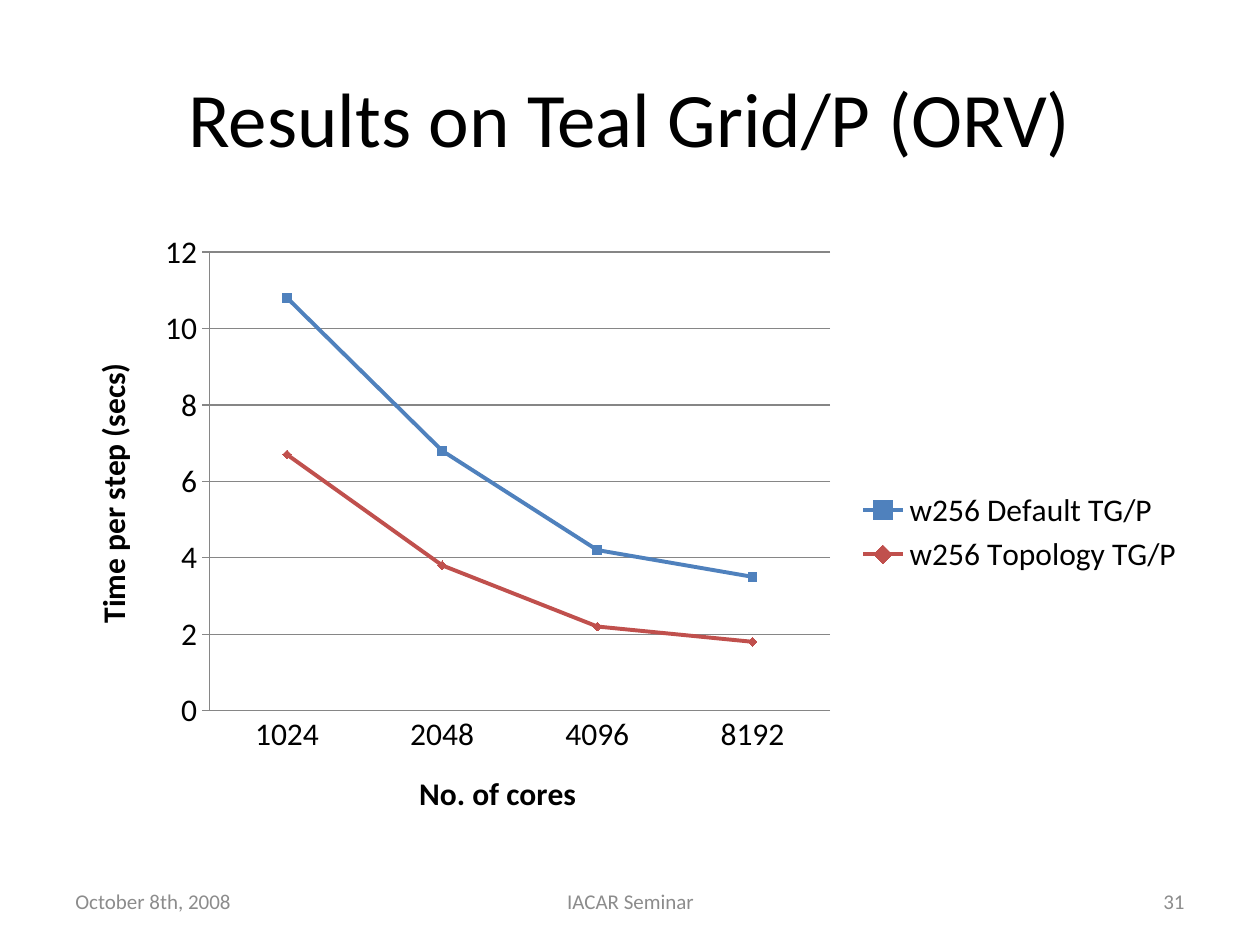
from dataclasses import dataclass

from pptx import Presentation
from pptx import util as u
from pptx.chart import data as chart_data
from pptx.dml import color
from pptx.enum import chart as ch, text


@dataclass(frozen=True)
class Theme:
    font: str = "Calibri"
    ink: str = "000000"
    muted: str = "8C8C8C"
    rule: str = "868686"
    blue: str = "4F81BD"
    red: str = "C0504D"
    title_size: int = 44
    chart_size: int = 18
    footer_size: int = 12


THEME = Theme()
CORES = ["1024", "2048", "4096", "8192"]
TIMINGS = [
    ("w256 Default TG/P", [10.8, 6.8, 4.2, 3.5], THEME.blue, ch.XL_MARKER_STYLE.SQUARE),
    ("w256 Topology TG/P", [6.7, 3.8, 2.2, 1.8], THEME.red, ch.XL_MARKER_STYLE.DIAMOND),
]
FOOTERS = [
    ("October 8th, 2008", 0.5, 2.33, text.PP_ALIGN.LEFT),
    ("IACAR Seminar", 3.42, 3.17, text.PP_ALIGN.CENTER),
    ("31", 7.17, 2.33, text.PP_ALIGN.RIGHT),
]


def rgb(value):
    return color.RGBColor.from_string(value)


def style_font(font, size, ink, bold=False):
    font.name = THEME.font
    font.size = u.Pt(size)
    font.bold = bold
    font.color.rgb = rgb(ink)


def fill_text(holder, wording, size, ink, align):
    frame = holder.text_frame
    frame.text = wording
    frame.word_wrap = True
    frame.vertical_anchor = text.MSO_ANCHOR.MIDDLE
    paragraph = frame.paragraphs[0]
    paragraph.alignment = align
    style_font(paragraph.runs[0].font, size, ink)


def add_title(slide, wording):
    title = slide.shapes.title
    title.left, title.top = u.Inches(0.5), u.Inches(0.3)
    title.width, title.height = u.Inches(9), u.Inches(1.25)
    fill_text(title, wording, THEME.title_size, THEME.ink, text.PP_ALIGN.CENTER)


def add_footer(slide, wording, left, width, align):
    footer = slide.shapes.add_textbox(
        u.Inches(left), u.Inches(6.95), u.Inches(width), u.Inches(0.4))
    fill_text(footer, wording, THEME.footer_size, THEME.muted, align)


def style_axis(axis, wording, tick):
    frame = axis.axis_title.text_frame
    frame.text = wording
    style_font(frame.paragraphs[0].runs[0].font, THEME.chart_size, THEME.ink, bold=True)
    axis.major_tick_mark = tick
    axis.minor_tick_mark = ch.XL_TICK_MARK.NONE
    axis.format.line.color.rgb = rgb(THEME.rule)


def style_series(series, ink, marker):
    series.smooth = False
    series.format.line.color.rgb = rgb(ink)
    series.format.line.width = u.Pt(2.25)
    series.marker.style = marker
    series.marker.size = 5
    series.marker.format.fill.solid()
    series.marker.format.fill.fore_color.rgb = rgb(ink)
    series.marker.format.line.color.rgb = rgb(ink)


def add_timing_chart(slide):
    timings = chart_data.CategoryChartData()
    timings.categories = CORES
    for name, values, _, _ in TIMINGS:
        timings.add_series(name, values)
    chart = slide.shapes.add_chart(
        ch.XL_CHART_TYPE.LINE_MARKERS, u.Inches(0.5), u.Inches(1.75),
        u.Inches(9), u.Inches(4.95), timings).chart

    style_font(chart.font, THEME.chart_size, THEME.ink)
    chart.has_title = False
    chart.has_legend = True
    chart.legend.position = ch.XL_LEGEND_POSITION.RIGHT
    chart.legend.include_in_layout = False
    chart.plots[0].vary_by_categories = False

    style_axis(chart.category_axis, "No. of cores", ch.XL_TICK_MARK.NONE)
    style_axis(chart.value_axis, "Time per step (secs)", ch.XL_TICK_MARK.CROSS)
    chart.value_axis.minimum_scale = 0
    chart.value_axis.maximum_scale = 12
    chart.value_axis.major_unit = 2
    chart.value_axis.has_major_gridlines = True
    chart.value_axis.major_gridlines.format.line.color.rgb = rgb(THEME.rule)

    for series, (_, _, ink, marker) in zip(chart.plots[0].series, TIMINGS):
        style_series(series, ink, marker)


def main():
    deck = Presentation()
    deck.slide_width, deck.slide_height = u.Inches(10), u.Inches(7.5)
    slide = deck.slides.add_slide(deck.slide_layouts[5])
    add_title(slide, "Results on Teal Grid/P (ORV)")
    add_timing_chart(slide)
    for footer in FOOTERS:
        add_footer(slide, *footer)
    deck.save("out.pptx")


if __name__ == "__main__":
    main()
